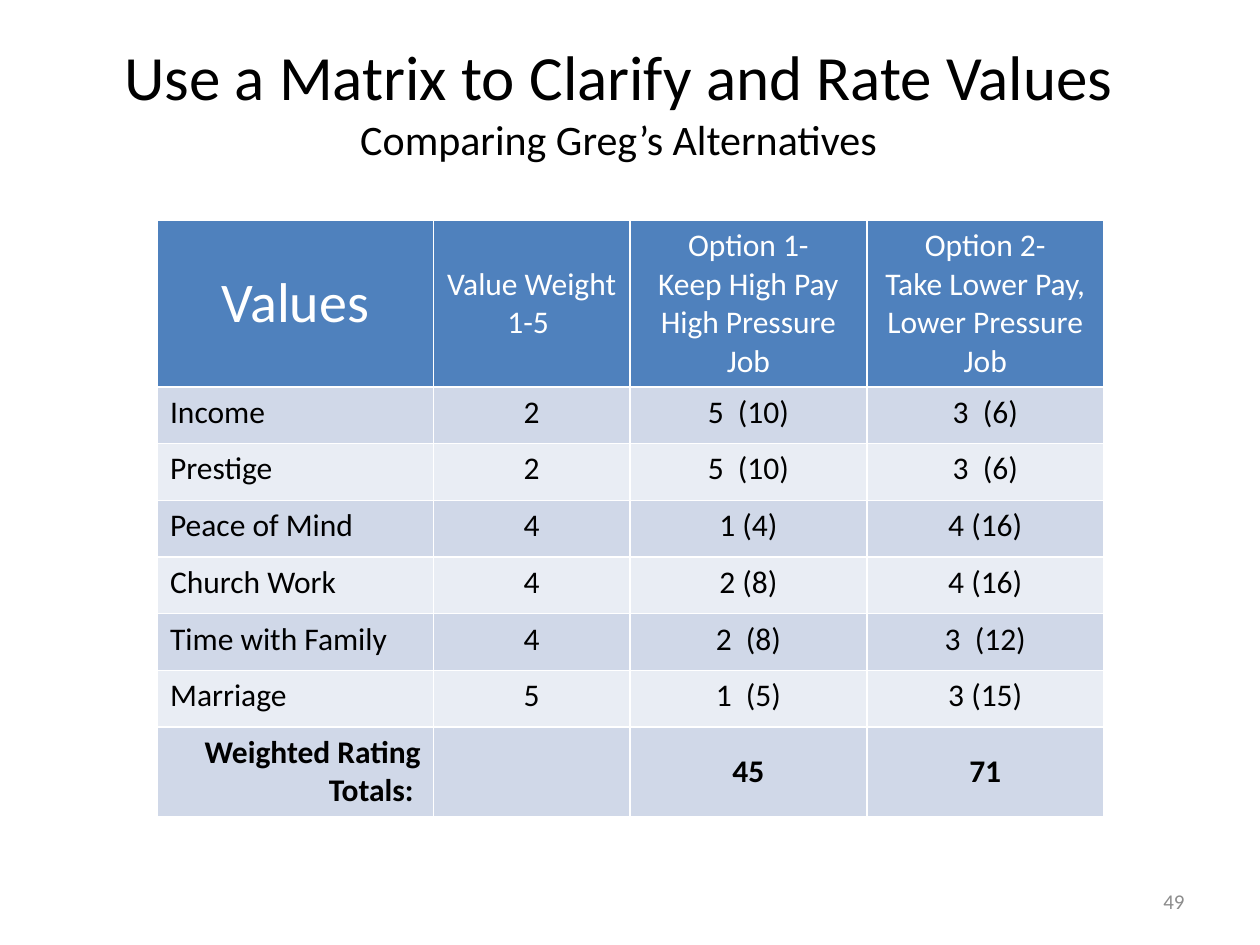
"""Build the slide that compares two job options in a weighted values matrix."""
from pptx import Presentation
from pptx.dml.color import RGBColor
from pptx.enum import text
from pptx.util import Inches, Pt

LEFT, CENTER, RIGHT = text.PP_ALIGN.LEFT, text.PP_ALIGN.CENTER, text.PP_ALIGN.RIGHT
TOP, MIDDLE = text.MSO_ANCHOR.TOP, text.MSO_ANCHOR.MIDDLE
BLACK, WHITE, GRAY = "000000", "FFFFFF", "8C8C8C"
HEADER_FILL, BAND_FILLS = "4F81BD", ("D0D8E8", "E9EDF4")

TITLE = "Use a Matrix to Clarify and Rate Values\nComparing Greg’s Alternatives"
TITLE_SIZES = (36, 24)
PAGE_NUMBER = "49"
MATRIX = [
    ("Values", "Value Weight\n1-5 ", "Option 1-\nKeep High Pay High Pressure Job",
     "Option 2-\nTake Lower Pay, Lower Pressure Job"),
    ("Income", "2", "5  (10)", "3  (6)"),
    ("Prestige", "2", "5  (10)", "3  (6)"),
    ("Peace of Mind", "4", "1 (4)", "4 (16)"),
    ("Church Work", "4", "2 (8)", "4 (16)"),
    ("Time with Family", "4", "2  (8)", "3  (12)"),
    ("Marriage", "5", "1  (5)", "3 (15)"),
    ("Weighted Rating Totals: ", "", "45", "71"),
]
COLUMN_WIDTHS = (2.19, 1.56, 1.88, 1.88)
HEADER_HEIGHT, ROW_HEIGHT = 1.04, 0.45


def rgb(color):
    return RGBColor.from_string(color)


def write(frame, content, size, color=BLACK, align=CENTER, bold=False):
    frame.text = content
    for paragraph in frame.paragraphs:
        paragraph.alignment = align
        paragraph.font.size = Pt(size)
        for run in paragraph.runs:
            run.font.name, run.font.size, run.font.bold = "Calibri", Pt(size), bold
            run.font.color.rgb = rgb(color)


def add_title(slide):
    title = slide.shapes.title
    title.left, title.top, title.width, title.height = map(Inches, (0.85, 0.25, 8.12, 1.11))
    frame = title.text_frame
    write(frame, TITLE, TITLE_SIZES[0])
    frame.word_wrap, frame.vertical_anchor = False, TOP
    frame.auto_size = text.MSO_AUTO_SIZE.NONE
    for paragraph, size in zip(frame.paragraphs, TITLE_SIZES):
        paragraph.runs[0].font.size = Pt(size)


def add_matrix(slide):
    heights = [HEADER_HEIGHT] + [ROW_HEIGHT] * (len(MATRIX) - 1)
    table = slide.shapes.add_table(
        len(MATRIX), len(COLUMN_WIDTHS), Inches(1.25), Inches(1.75),
        Inches(sum(COLUMN_WIDTHS)), Inches(sum(heights))).table
    for column, width in zip(table.columns, COLUMN_WIDTHS):
        column.width = Inches(width)
    for row, height in zip(table.rows, heights):
        row.height = Inches(height)
    last = len(MATRIX) - 1
    for i, values in enumerate(MATRIX):
        for j, value in enumerate(values):
            cell = table.cell(i, j)
            cell.fill.solid()
            cell.fill.fore_color.rgb = rgb(BAND_FILLS[(i - 1) % 2] if i else HEADER_FILL)
            middle = (i == 0 and j < 2) or (i == last and j > 1)
            cell.vertical_anchor = MIDDLE if middle else TOP
            align = CENTER if i == 0 or j else RIGHT if i == last else LEFT
            write(cell.text_frame, value, 32 if i == j == 0 else 18,
                  BLACK if i else WHITE, align, i == last)


def add_page_number(slide):
    box = slide.shapes.add_textbox(*map(Inches, (7.17, 6.95, 2.33, 0.4)))
    box.text_frame.word_wrap = True
    box.text_frame.vertical_anchor = MIDDLE
    write(box.text_frame, PAGE_NUMBER, 12, GRAY, RIGHT)


def main():
    presentation = Presentation()
    presentation.slide_width, presentation.slide_height = Inches(10), Inches(7.5)
    slide = presentation.slides.add_slide(presentation.slide_layouts[5])
    add_title(slide)
    add_matrix(slide)
    add_page_number(slide)
    presentation.save("out.pptx")


if __name__ == "__main__":
    main()
